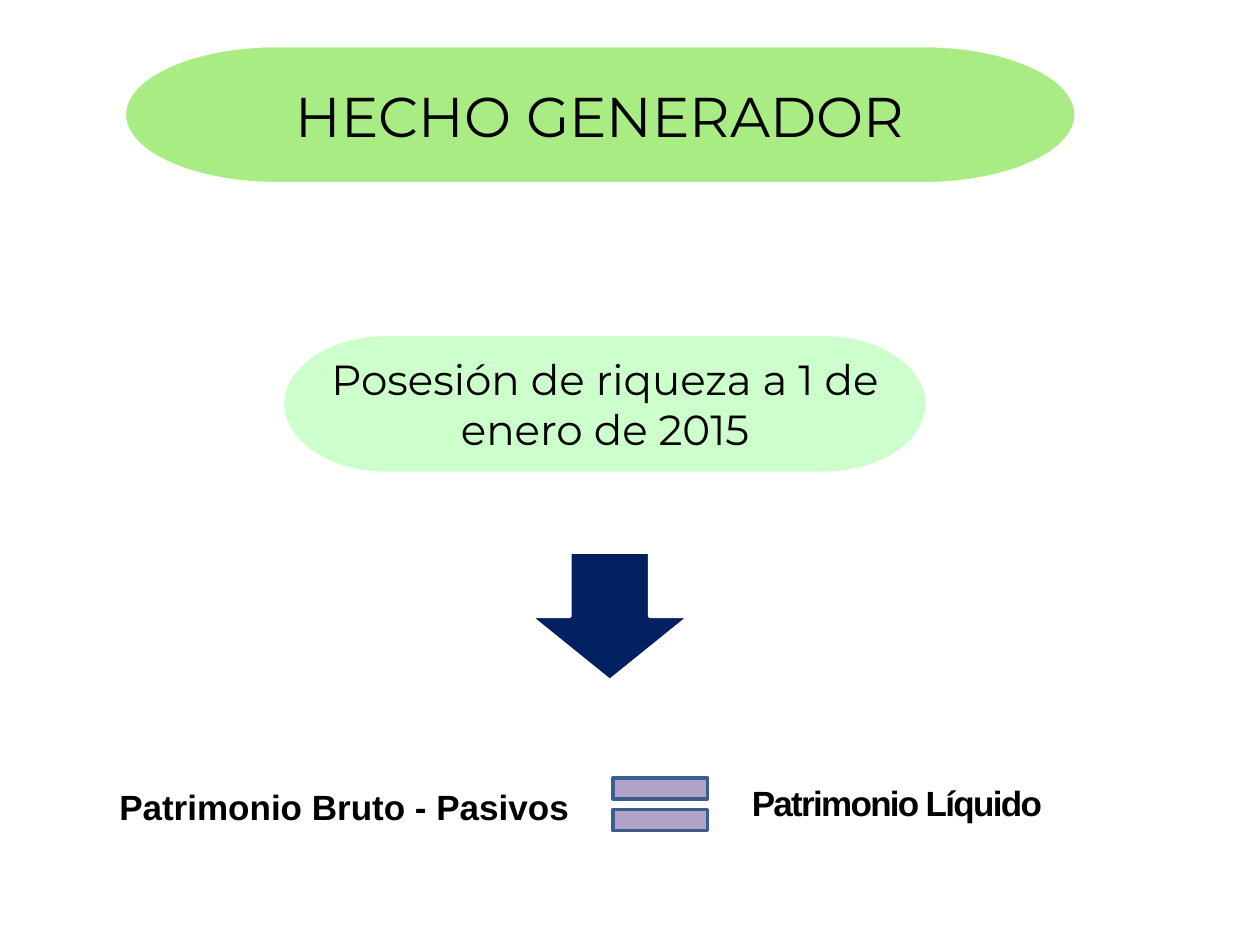
from pptx import Presentation
from pptx.dml.color import RGBColor
from pptx.enum.shapes import MSO_SHAPE as Shape
from pptx.enum.text import MSO_ANCHOR as Anchor, PP_ALIGN as Align
from pptx.util import Pt

BLACK = RGBColor(0x00, 0x00, 0x00)
WHITE = RGBColor(0xFF, 0xFF, 0xFF)
GREEN = RGBColor(0xA9, 0xEC, 0x84)
MINT = RGBColor(0xCC, 0xFF, 0xCC)
NAVY = RGBColor(0x00, 0x20, 0x60)
LILAC = RGBColor(0xB3, 0xA2, 0xC7)
STEEL = RGBColor(0x3A, 0x5F, 0x8C)


def write(frame, text, size, font_name, align, bold=False):
    """Fill a text frame with one formatted run and return that run."""
    frame.word_wrap = True
    frame.text = text
    para = frame.paragraphs[0]
    para.alignment = align
    span = para.runs[0]
    span.font.size = Pt(size)
    span.font.name = font_name
    span.font.bold = bold
    span.font.color.rgb = BLACK
    return span


def add_figure(page, kind, bounds, fill, outline=WHITE):
    figure = page.shapes.add_shape(kind, *map(Pt, bounds))
    figure.shadow.inherit = False
    figure.fill.solid()
    figure.fill.fore_color.rgb = fill
    figure.line.color.rgb = outline
    figure.line.width = Pt(2)
    return figure


def add_capsule(page, bounds, fill, text, size):
    capsule = add_figure(page, Shape.FLOWCHART_TERMINATOR, bounds, fill)
    capsule.text_frame.vertical_anchor = Anchor.MIDDLE
    write(capsule.text_frame, text, size, "Montserrat", Align.CENTER)


def add_term(page, bounds, text, align, spacing=0):
    """Add one side of the equation, with letter spacing in points."""
    box = page.shapes.add_textbox(*map(Pt, bounds))
    span = write(box.text_frame, text, 20, "Arial", align, bold=True)
    if spacing:
        span.font._element.set("spc", str(spacing * 100))


def main():
    deck = Presentation()
    deck.slide_width, deck.slide_height = Pt(720), Pt(540)
    page = deck.slides.add_slide(deck.slide_layouts[6])

    add_capsule(page, (71, 26, 544, 79), GREEN, "HECHO GENERADOR", 32)
    add_capsule(page, (161.5, 191, 368.5, 79.5), MINT,
                "Posesión de riqueza a 1 de enero de 2015", 24)
    add_term(page, (39.5, 445.5, 314.5, 22.5), "Patrimonio Bruto - Pasivos", Align.CENTER)
    add_figure(page, Shape.MATH_EQUAL, (340.5, 434, 73.5, 51), LILAC, STEEL)
    add_term(page, (422.5, 443, 181.5, 31), "Patrimonio Líquido", Align.LEFT, spacing=-1)
    add_figure(page, Shape.DOWN_ARROW, (303, 315.5, 91, 73.5), NAVY)

    deck.save("out.pptx")


if __name__ == "__main__":
    main()
